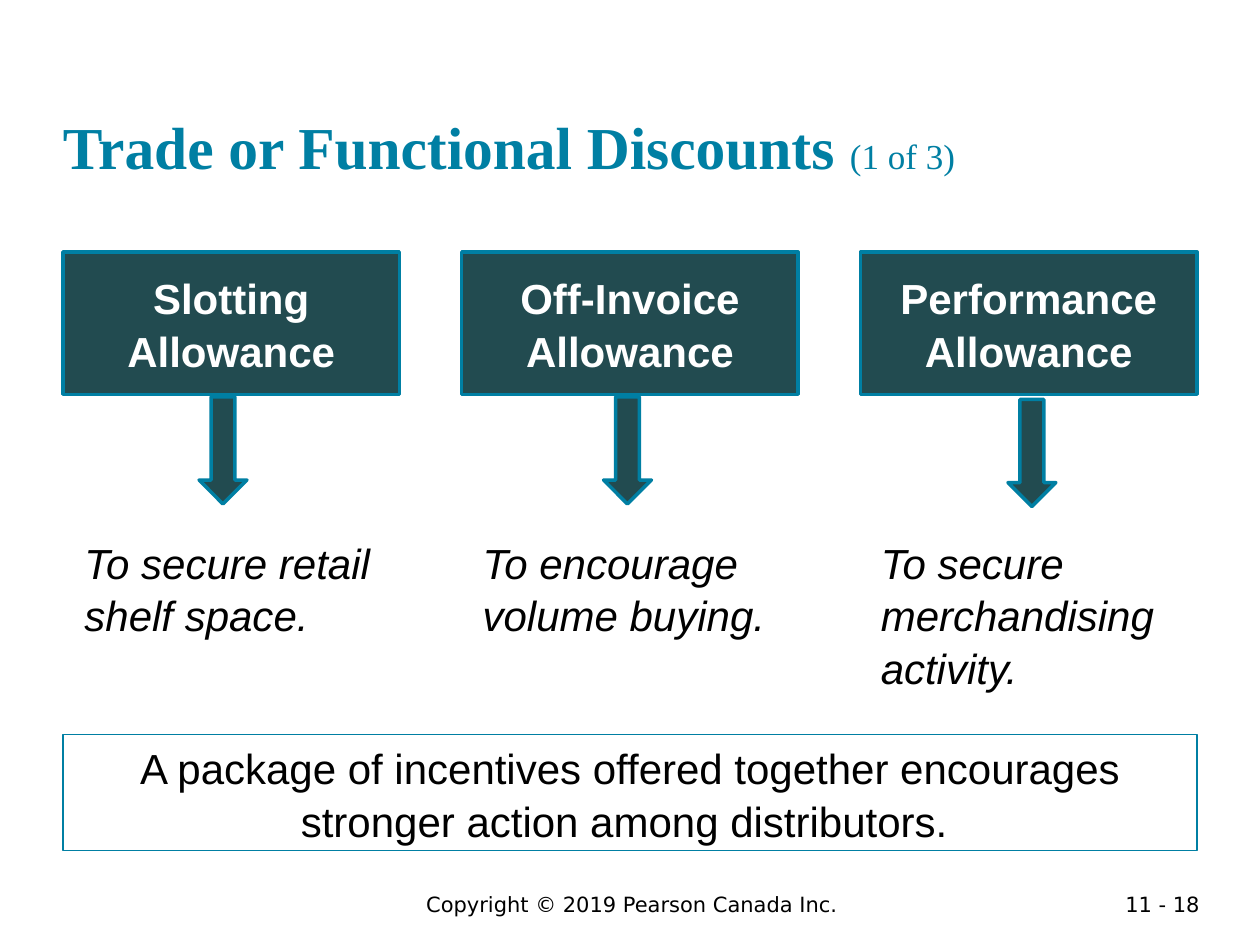
"""Build the slide on trade or functional discounts."""
from pptx import Presentation
from pptx.dml.color import RGBColor
from pptx.enum.shapes import MSO_SHAPE
from pptx.enum.text import MSO_ANCHOR, PP_ALIGN
from pptx.util import Inches, Pt

RECT, ARROW = MSO_SHAPE.RECTANGLE, MSO_SHAPE.DOWN_ARROW
TOP, MIDDLE, BOTTOM = MSO_ANCHOR.TOP, MSO_ANCHOR.MIDDLE, MSO_ANCHOR.BOTTOM
LEFT, CENTER, RIGHT = PP_ALIGN.LEFT, PP_ALIGN.CENTER, PP_ALIGN.RIGHT

COLORS = {"teal": "007FA3", "dark": "224B50", "white": "FFFFFF", "black": "000000"}
INK = {name: RGBColor.from_string(value) for name, value in COLORS.items()}

HEAD = {"name": "Times New Roman", "size": Pt(34), "bold": True, "color": "teal"}
COUNT = {**HEAD, "size": Pt(20), "bold": False}
BODY = {"name": "Arial", "size": Pt(24), "color": "black"}
LABEL = {**BODY, "bold": True, "color": "white"}
GOAL = {**BODY, "italic": True}
FOOT = {"name": "DejaVu Sans", "size": Pt(12), "color": "black"}

prs = Presentation()
prs.slide_width, prs.slide_height = Inches(10), Inches(7.5)
slide = prs.slides.add_slide(prs.slide_layouts[6])


def add_box(kind, at, width=0, fill=None):
    place = [Inches(n) for n in at]
    if kind is None:
        return slide.shapes.add_textbox(*place)
    shape = slide.shapes.add_shape(kind, *place)
    shape.shadow.inherit = False
    shape.line.color.rgb = INK["teal"]
    shape.line.width = Pt(width)
    if fill:
        shape.fill.solid()
        shape.fill.fore_color.rgb = INK[fill]
    else:
        shape.fill.background()
    return shape


def write(shape, runs, align=LEFT, anchor=TOP, inset=True, spacing=1):
    frame = shape.text_frame
    frame.word_wrap = True
    frame.vertical_anchor = anchor
    if not inset:
        for side in ("left", "top", "right", "bottom"):
            setattr(frame, f"margin_{side}", 0)
    para = frame.paragraphs[0]
    para.alignment = align
    para.line_spacing = spacing
    for text, style in runs:
        run = para.add_run()
        run.text = text
        for key, value in style.items():
            if key == "color":
                run.font.color.rgb = INK[value]
            else:
                setattr(run.font, key, value)


write(add_box(None, (1.64, 7.03, 6.75, 0.3)),
      [("Copyright © 2019 Pearson Canada Inc.", FOOT)], CENTER)
write(add_box(None, (8.62, 7.03, 1, 0.22)), [("11 - 18", FOOT)], RIGHT)
write(add_box(None, (0.5, 0.24, 9, 1.2)),
      [("Trade or Functional Discounts ", HEAD), ("(1 of 3)", COUNT)],
      anchor=BOTTOM, inset=False)

columns = [
    ("Slotting Allowance", "To secure retail shelf space.", 3.15),
    ("Off-Invoice Allowance", "To encourage volume buying.", 3.15),
    ("Performance Allowance", "To secure merchandising activity.", 3.17),
]
for i, (label, goal, top) in enumerate(columns):
    card = add_box(RECT, (0.5 + 3.165 * i, 2, 2.67, 1.13), 2, "dark")
    write(card, [(label, LABEL)], CENTER, MIDDLE, False, 1.04)
    add_box(ARROW, (1.58 + 3.21 * i, top, 0.38, 0.85), 2, "dark")
    note = add_box(None, (0.67 + 3.16 * i, 4.25, 2.68, 1.33))
    write(note, [(goal, GOAL)], inset=False, spacing=1.04)

summary = ("A package of incentives offered together encourages "
           "stronger action among distributors. ")
write(add_box(RECT, (0.5, 5.83, 9, 0.92), 1), [(summary, BODY)], CENTER, spacing=1.04)

prs.save("out.pptx")
